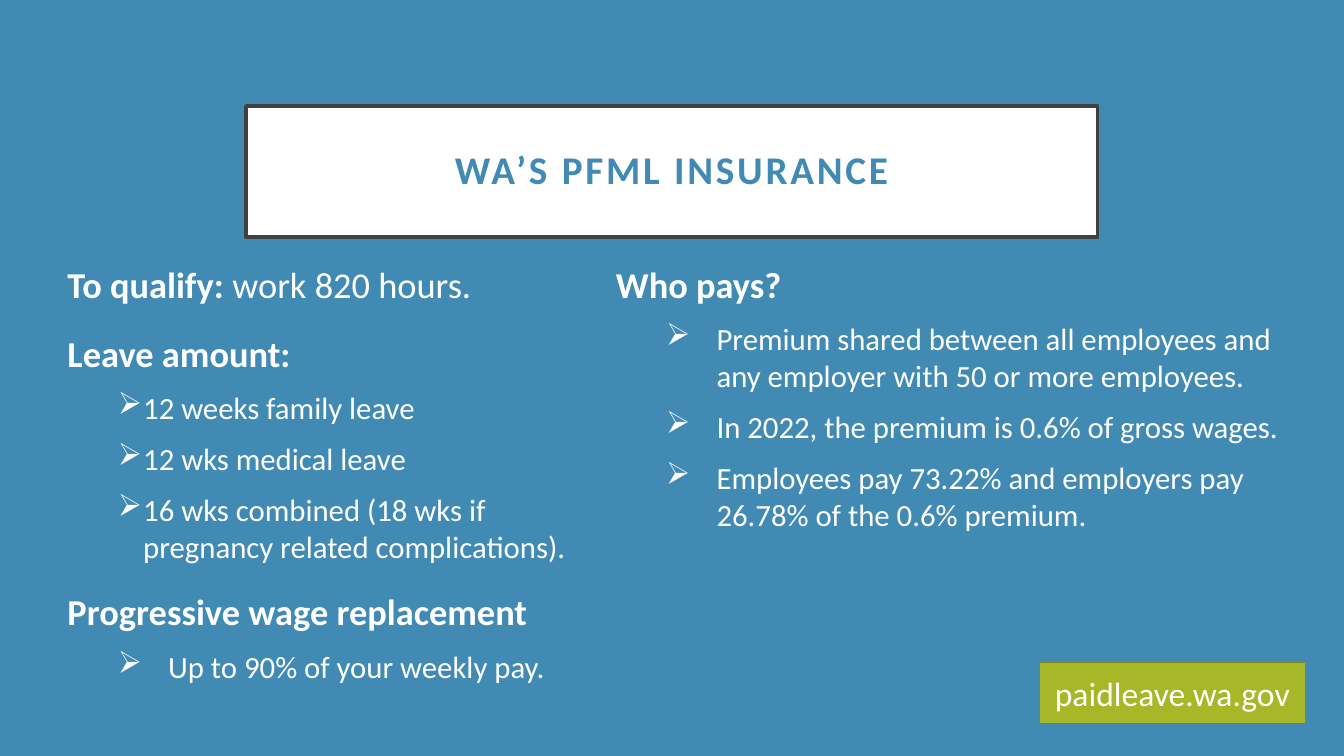
from lxml.etree import SubElement
from pptx import Presentation
from pptx.dml.color import RGBColor
from pptx.enum.shapes import MSO_SHAPE
from pptx.enum.text import MSO_ANCHOR, PP_ALIGN
from pptx.oxml.ns import qn
from pptx.util import Cm, Pt

BLUE = RGBColor(0x41, 0x8A, 0xB3)
WHITE = RGBColor(0xFF, 0xFF, 0xFF)
DARK = RGBColor(0x40, 0x40, 0x40)
GREEN = RGBColor(0xA6, 0xB7, 0x27)
OLIVE = RGBColor(0x7B, 0x87, 0x1D)
FONT = "Calibri"
TIGHT = (1.91, 0.64)
WIDE = (2.54, 1.27)

LEAVE = [
    (None, "To qualify: ", "work 820 hours."),
    (None, "Leave amount:", ""),
    (TIGHT, "", "12 weeks family leave"),
    (TIGHT, "", "12 wks medical leave"),
    (TIGHT, "", "16 wks combined (18 wks if pregnancy related complications)."),
    (None, "Progressive wage replacement", ""),
    (WIDE, "", "Up to 90% of your weekly pay."),
]
PREMIUM = [
    (None, "Who pays?", ""),
    (WIDE, "", "Premium shared between all employees and any employer with 50 or more employees."),
    (WIDE, "", "In 2022, the premium is 0.6% of gross wages."),
    (WIDE, "", "Employees pay 73.22% and employers pay 26.78% of the 0.6% premium."),
]


def add_run(p, text, size, color, bold=False):
    """Append a styled run to a paragraph."""
    r = p.add_run()
    r.text = text
    r.font.name = FONT
    r.font.size = Pt(size)
    r.font.bold = bold
    r.font.color.rgb = color
    return r


def set_bullet(p, indent):
    """Give a paragraph a white arrow bullet with a hanging indent."""
    margin, hanging = indent
    pPr = p._p.get_or_add_pPr()
    pPr.set("marL", str(Cm(margin)))
    pPr.set("indent", str(-Cm(hanging)))
    color = SubElement(pPr, qn("a:buClr"))
    SubElement(color, qn("a:srgbClr"), val=str(WHITE))
    SubElement(pPr, qn("a:buChar"), char="➢")


def add_panel(s, box, fill, line, width):
    """Draw a filled, outlined rectangle and return it with its centred paragraph."""
    sp = s.shapes.add_shape(MSO_SHAPE.RECTANGLE, *map(Cm, box))
    sp.shadow.inherit = False
    sp.fill.solid()
    sp.fill.fore_color.rgb = fill
    sp.line.color.rgb = line
    sp.line.width = Pt(width)
    tf = sp.text_frame
    tf.word_wrap = True
    tf.vertical_anchor = MSO_ANCHOR.MIDDLE
    p = tf.paragraphs[0]
    p.alignment = PP_ALIGN.CENTER
    return sp, p


def add_title(s, box, text):
    """Place the framed, letter-spaced title."""
    sp, p = add_panel(s, box, WHITE, DARK, 2.5)
    tf = sp.text_frame
    tf.margin_left = tf.margin_right = tf.margin_top = tf.margin_bottom = Cm(0.51)
    p.line_spacing = 0.9
    r = add_run(p, text, 28, BLUE, True)
    r.font._element.set("spc", "200")


def add_link(s, box, text):
    """Place the green web address panel."""
    _, p = add_panel(s, box, GREEN, OLIVE, 1)
    add_run(p, text, 24, WHITE)


def add_column(s, box, items):
    """Place a column of headings and bulleted points."""
    tf = s.shapes.add_textbox(*map(Cm, box)).text_frame
    tf.word_wrap = True
    for i, (indent, lead, text) in enumerate(items):
        p = tf.paragraphs[0] if i == 0 else tf.add_paragraph()
        if i:
            p.space_before = Pt(10 if indent else 18)
        if indent:
            set_bullet(p, indent)
        size = 22 if indent else 26
        if lead:
            add_run(p, lead, size, WHITE, True)
        if text:
            add_run(p, text, size, WHITE)


def main():
    """Build and save the slide."""
    prs = Presentation()
    prs.slide_width, prs.slide_height = Cm(33.87), Cm(19.05)
    s = prs.slides.add_slide(prs.slide_layouts[6])
    s.background.fill.solid()
    s.background.fill.fore_color.rgb = BLUE
    add_title(s, (6.2, 2.67, 21.46, 3.3), "WA’S PFML INSURANCE")
    add_column(s, (1.45, 6.48, 13.84, 11.76), LEAVE)
    add_link(s, (26.19, 16.69, 6.71, 1.55), "paidleave.wa.gov")
    add_column(s, (15.27, 6.48, 17.63, 10.49), PREMIUM)
    prs.save("out.pptx")


if __name__ == "__main__":
    main()
